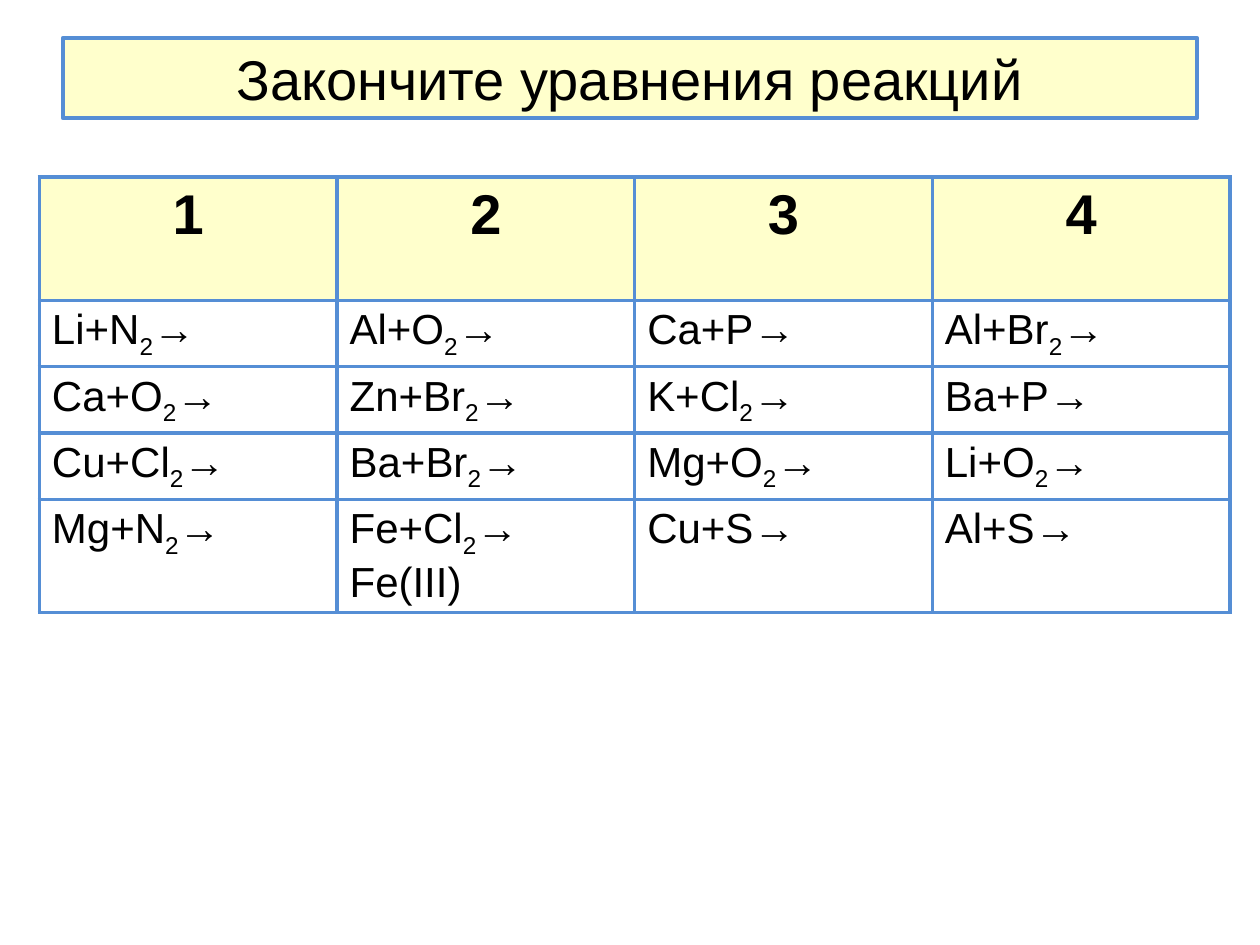
"""Builds a slide with a table of reaction equations to complete."""
from lxml.etree import SubElement
from pptx import Presentation
from pptx.dml.color import RGBColor
from pptx.enum.shapes import MSO_SHAPE
from pptx.enum.text import MSO_ANCHOR, PP_ALIGN
from pptx.oxml.ns import qn
from pptx.util import Pt

CREAM, BLUE, BLACK = "FFFFCC", "558ED5", "000000"
BORDER = 2.25
HEADINGS = ["1", "2", "3", "4"]
REACTIONS = [
    ["Li+N2→", "Al+O2→", "Ca+P→", "Al+Br2→"],
    ["Ca+O2→", "Zn+Br2→", "K+Cl2→", "Ba+P→"],
    ["Cu+Cl2→", "Ba+Br2→", "Mg+O2→", "Li+O2→"],
    ["Mg+N2→", "Fe+Cl2→\nFe(III)", "Cu+S→", "Al+S→"],
]


def color(value):
    """Turn a hex string into a colour."""
    return RGBColor.from_string(value)


def style(run, size, bold=False):
    """Set the font of a run."""
    run.font.name = "Arial"
    run.font.size = Pt(size)
    run.font.bold = bold
    run.font.color.rgb = color(BLACK)


def write_heading(frame, text, bold=False):
    """Write one centred line of large text."""
    frame.text = text
    heading = frame.paragraphs[0]
    heading.alignment = PP_ALIGN.CENTER
    style(heading.runs[0], 32, bold)


def write_reaction(frame, reaction):
    """Write a reaction with its digits lowered as indices."""
    frame.text = reaction
    for paragraph in frame.paragraphs:
        before, index, after = paragraph.text.partition("2")
        paragraph.text = before
        for part in filter(None, (index, after)):
            paragraph.add_run().text = part
        for run in paragraph.runs:
            style(run, 24)
            if run.text == "2":
                run.font._element.set("baseline", "-25000")


def add_borders(cell):
    """Draw a line on all four sides of a cell."""
    properties = cell._tc.get_or_add_tcPr()
    for position, side in enumerate(("lnL", "lnR", "lnT", "lnB")):
        line = properties.makeelement(qn(f"a:{side}"), {"w": str(Pt(BORDER))})
        fill = SubElement(line, qn("a:solidFill"))
        SubElement(fill, qn("a:srgbClr"), val=BLUE)
        properties.insert(position, line)


def add_title(slide, text):
    """Add the framed title bar."""
    title = slide.shapes.add_shape(
        MSO_SHAPE.RECTANGLE, Pt(36), Pt(21.6), Pt(648), Pt(46))
    title.shadow.inherit = False
    title.fill.solid()
    title.fill.fore_color.rgb = color(CREAM)
    title.line.color.rgb = color(BLUE)
    title.line.width = Pt(BORDER)
    title.text_frame.vertical_anchor = MSO_ANCHOR.MIDDLE
    write_heading(title.text_frame, text)


def add_reactions(slide):
    """Add the table of numbered columns of reactions."""
    table = slide.shapes.add_table(
        len(REACTIONS) + 1, len(HEADINGS),
        Pt(22.5), Pt(101.25), Pt(680.4), Pt(188.5)).table
    table.first_row = table.horz_banding = False
    for number, row in enumerate(table.rows):
        row.height = Pt(29.5 if number else 70.5)
    for column, heading in enumerate(HEADINGS):
        cell = table.cell(0, column)
        write_heading(cell.text_frame, heading, bold=True)
        cell.fill.solid()
        cell.fill.fore_color.rgb = color(CREAM)
        add_borders(cell)
    for row, reactions in enumerate(REACTIONS, 1):
        for column, reaction in enumerate(reactions):
            cell = table.cell(row, column)
            write_reaction(cell.text_frame, reaction)
            cell.fill.background()
            add_borders(cell)


def main():
    """Build and save the slide."""
    deck = Presentation()
    deck.slide_width, deck.slide_height = Pt(720), Pt(540)
    slide = deck.slides.add_slide(deck.slide_layouts[6])
    add_title(slide, "Закончите уравнения реакций")
    add_reactions(slide)
    deck.save("out.pptx")


if __name__ == "__main__":
    main()
